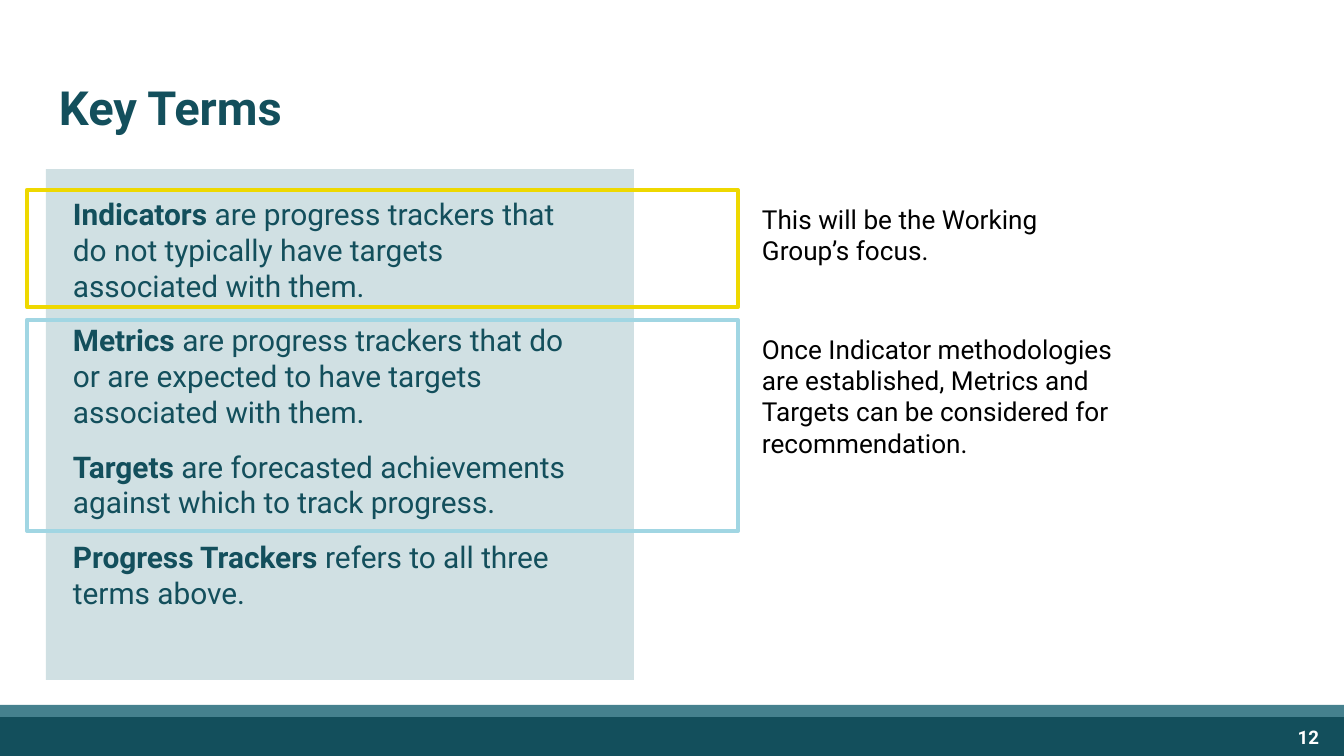
from typing import NamedTuple

from lxml.etree import SubElement
from pptx import Presentation
from pptx.dml.color import RGBColor
from pptx.enum.shapes import MSO_SHAPE as Shape
from pptx.enum.text import MSO_ANCHOR as Anchor, PP_ALIGN as Align
from pptx.oxml.ns import qn
from pptx.util import Pt

PX = 914400 / 134.4  # EMU in one px
TEAL, MID, PALE = "134F5C", "45818E", "D0E0E3"
GOLD, SKY, WHITE, BLACK = "EED800", "A1D6E3", "FFFFFF", "000000"


class Box(NamedTuple):
    left: int
    top: int
    width: int
    height: int


class Style(NamedTuple):
    size: float
    color: str
    bold: bool = False
    align: Align = Align.LEFT
    anchor: Anchor = Anchor.TOP
    pad: tuple = (13, 13, 13, 13)


class Term(NamedTuple):
    name: str
    text: str


class Focus(NamedTuple):
    top: int
    height: int
    color: str
    note: str


TERMS = [
    Term("Indicators ", "are progress trackers that do not typically have "
         "targets associated with them."),
    Term("Metrics ", "are progress trackers that do or are expected to have "
         "targets associated with them."),
    Term("Targets ", "are forecasted achievements against which to track "
         "progress."),
    Term("Progress Trackers ", "refers to all three terms above."),
]
FOCUSES = [
    Focus(190, 117, GOLD, "This will be the Working Group’s focus."),
    Focus(320, 211, SKY, "Once Indicator methodologies are established, "
          "Metrics and Targets can be considered for recommendation."),
]


def px(count: int) -> int:
    return round(count * PX)


def rgb(code: str) -> RGBColor:
    return RGBColor.from_string(code)


def add_rect(slide, box: Box, fill: str = "", line: str = ""):
    rect = slide.shapes.add_shape(Shape.RECTANGLE, *map(px, box))
    rect.shadow.inherit = False
    if fill:
        rect.fill.solid()
        rect.fill.fore_color.rgb = rgb(fill)
    else:
        rect.fill.background()
    if line:
        rect.line.color.rgb = rgb(line)
        rect.line.width = Pt(2.25)
        SubElement(rect.line._get_or_add_ln(), qn("a:round"))
    else:
        rect.line.fill.background()
    return rect


def set_frame(frame, style: Style) -> None:
    left, top, right, bottom = map(px, style.pad)
    form = {"word_wrap": True, "vertical_anchor": style.anchor,
            "margin_left": left, "margin_top": top,
            "margin_right": right, "margin_bottom": bottom}
    for name, value in form.items():
        setattr(frame, name, value)


def add_run(para, text: str, style: Style) -> None:
    run = para.add_run()
    run.text = text
    form = {"name": "Roboto", "size": Pt(style.size), "bold": style.bold}
    for name, value in form.items():
        setattr(run.font, name, value)
    run.font.color.rgb = rgb(style.color)


def add_text(slide, box: Box, text: str, style: Style) -> None:
    frame = slide.shapes.add_textbox(*map(px, box)).text_frame
    set_frame(frame, style)
    para = frame.paragraphs[0]
    para.alignment = style.align
    add_run(para, text, style)


def add_terms(slide, box: Box, terms: list[Term]) -> None:
    plain = Style(16, TEAL, pad=(27, 27, 40, 27))
    strong = plain._replace(bold=True)
    frame = add_rect(slide, box, fill=PALE).text_frame
    set_frame(frame, plain)
    for i, term in enumerate(terms):
        para = frame.add_paragraph() if i else frame.paragraphs[0]
        para.alignment = plain.align
        para.space_before = Pt(10 if i else 0)
        add_run(para, term.name, strong)
        add_run(para, term.text, plain)


def main() -> None:
    deck = Presentation()
    deck.slide_width, deck.slide_height = px(1344), px(756)
    slide = deck.slides.add_slide(deck.slide_layouts[6])

    # Footer bands
    add_rect(slide, Box(-1, 717, 1345, 39), fill=TEAL)
    add_rect(slide, Box(-1, 705, 1345, 12), fill=MID)

    # Title and panel of terms
    add_text(slide, Box(46, 66, 1252, 84), "Key Terms",
             Style(25.2, TEAL, bold=True))
    add_terms(slide, Box(46, 169, 588, 511), TERMS)

    # Page number
    add_text(slide, Box(1252, 718, 80, 38), "12",
             Style(10, WHITE, True, Align.RIGHT, Anchor.MIDDLE))

    # Outlines around terms, each with its note
    for item in FOCUSES:
        add_rect(slide, Box(27, item.top, 711, item.height), line=item.color)
        add_text(slide, Box(749, item.top, 380, item.height), item.note,
                 Style(14, BLACK))

    deck.save("out.pptx")


if __name__ == "__main__":
    main()
